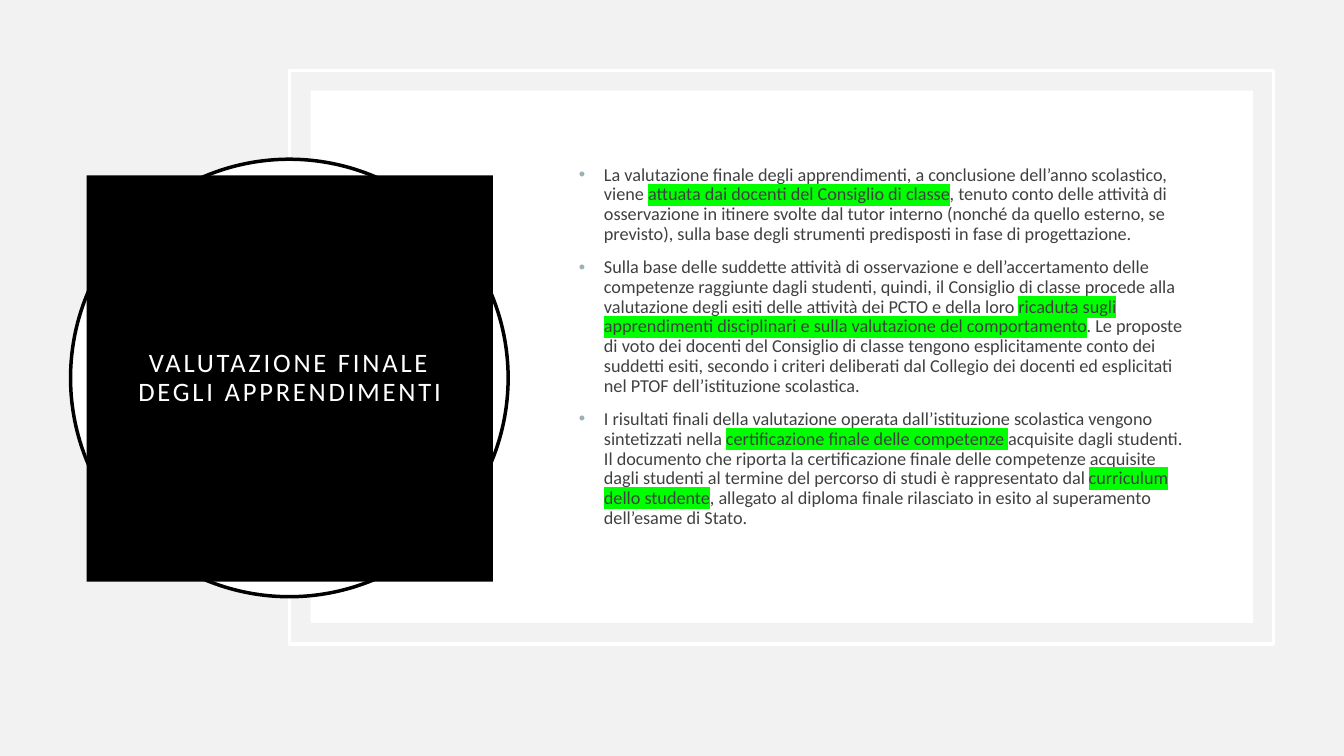
"""Build the slide on the final assessment of learning."""
from lxml.etree import SubElement
from pptx import Presentation
from pptx.dml.color import RGBColor
from pptx.enum.shapes import MSO_SHAPE
from pptx.enum.text import MSO_ANCHOR, MSO_AUTO_SIZE, PP_ALIGN
from pptx.oxml import parse_xml
from pptx.oxml.ns import nsdecls, qn
from pptx.util import Inches, Pt

COLORS = {
    "background": "F2F2F2",
    "white": "FFFFFF",
    "black": "000000",
    "text": "404040",
    "bullet": "9BAFB5",
    "highlight": "00FF00",
}
FONT = "Calibri"
TITLE = "VALUTAZIONE FINALE DEGLI APPRENDIMENTI"
PARAGRAPHS = [
    [
        ("La valutazione finale degli apprendimenti, a conclusione dell’anno scolastico, viene ", False),
        ("attuata dai docenti del Consiglio di classe", True),
        (", tenuto conto delle attività di osservazione in itinere svolte dal tutor interno "
         "(nonché da quello esterno, se previsto), sulla base degli strumenti predisposti "
         "in fase di progettazione.", False),
    ],
    [
        ("Sulla base delle suddette attività di osservazione e dell’accertamento delle competenze "
         "raggiunte dagli studenti, quindi, il Consiglio di classe procede alla valutazione degli "
         "esiti delle attività dei PCTO e della loro ", False),
        ("ricaduta sugli apprendimenti disciplinari e sulla valutazione del comportamento", True),
        (". Le proposte di voto dei docenti del Consiglio di classe tengono esplicitamente conto "
         "dei suddetti esiti, secondo i criteri deliberati dal Collegio dei docenti ed esplicitati "
         "nel PTOF dell’istituzione scolastica.", False),
    ],
    [
        ("I risultati finali della valutazione operata dall’istituzione scolastica vengono "
         "sintetizzati nella ", False),
        ("certificazione finale delle competenze ", True),
        ("acquisite dagli studenti. Il documento che riporta la certificazione finale delle "
         "competenze acquisite dagli studenti al termine del percorso di studi è rappresentato "
         "dal ", False),
        ("curriculum dello studente", True),
        (", allegato al diploma finale rilasciato in esito al superamento dell’esame di Stato.", False),
    ],
]


def color(name):
    """Return the named colour."""
    return RGBColor.from_string(COLORS[name])


def add_panel(slide, kind, box, fill=None, line=None):
    """Add a decorative shape with an optional fill and outline."""
    shape = slide.shapes.add_shape(kind, *map(Inches, box))
    shape.shadow.inherit = False
    if fill:
        shape.fill.solid()
        shape.fill.fore_color.rgb = color(fill)
    else:
        shape.fill.background()
    if line:
        shape.line.color.rgb = color(line)
        shape.line.width = Pt(2.5)
    else:
        shape.line.fill.background()


def place(placeholder, box, margins):
    """Move a placeholder, set its margins and return its text frame."""
    placeholder.left, placeholder.top, placeholder.width, placeholder.height = map(Inches, box)
    frame = placeholder.text_frame
    frame.word_wrap = True
    frame.auto_size = MSO_AUTO_SIZE.NONE
    frame.vertical_anchor = MSO_ANCHOR.MIDDLE
    (frame.margin_left, frame.margin_top,
     frame.margin_right, frame.margin_bottom) = map(Inches, margins)
    return frame


def format_run(run, size, name):
    """Set the font, size and colour of a run."""
    run.font.size = Pt(size)
    run.font.name = FONT
    run.font.color.rgb = color(name)


def highlight(run):
    """Mark a formatted run with the highlight colour."""
    mark = parse_xml(
        f'<a:highlight {nsdecls("a")}><a:srgbClr val="{COLORS["highlight"]}"/></a:highlight>')
    run.font._element.find(qn("a:solidFill")).addnext(mark)


def add_bullet(paragraph):
    """Give a paragraph a hanging coloured bullet."""
    properties = paragraph._p.get_or_add_pPr()
    properties.set("marL", str(Inches(0.25)))
    properties.set("indent", str(Inches(-0.25)))
    bullet_color = SubElement(properties, qn("a:buClr"))
    SubElement(bullet_color, qn("a:srgbClr"), val=COLORS["bullet"])
    SubElement(properties, qn("a:buFont"), typeface="Arial")
    SubElement(properties, qn("a:buChar"), char="•")


def fill_title(placeholder):
    """Write the title on its black block."""
    frame = place(placeholder, (0.86, 1.74, 4.03, 4.03), (0.2, 0.2, 0.2, 0.2))
    placeholder.fill.solid()
    placeholder.fill.fore_color.rgb = color("black")
    frame.text = TITLE
    paragraph = frame.paragraphs[0]
    paragraph.alignment = PP_ALIGN.CENTER
    paragraph.line_spacing = 0.9
    run = paragraph.runs[0]
    format_run(run, 19, "white")
    run.font._element.set("spc", "200")


def fill_body(placeholder):
    """Write the bulleted paragraphs with their highlighted phrases."""
    frame = place(placeholder, (5.64, 1.4, 6.25, 4.28), (0.1, 0.05, 0.1, 0.25))
    for index, pieces in enumerate(PARAGRAPHS):
        paragraph = frame.add_paragraph() if index else frame.paragraphs[0]
        add_bullet(paragraph)
        paragraph.line_spacing = 0.9
        paragraph.space_before = Pt(10 if index else 0)
        for text, marked in pieces:
            run = paragraph.add_run()
            run.text = text
            format_run(run, 13, "text")
            if marked:
                highlight(run)


def main():
    """Build and save the presentation."""
    presentation = Presentation()
    presentation.slide_width = Inches(13.33)
    presentation.slide_height = Inches(7.5)
    slide = presentation.slides.add_slide(presentation.slide_layouts[1])
    slide.background.fill.solid()
    slide.background.fill.fore_color.rgb = color("background")
    title, body = slide.placeholders
    add_panel(slide, MSO_SHAPE.RECTANGLE, (2.87, 0.7, 9.76, 5.69), line="white")
    add_panel(slide, MSO_SHAPE.RECTANGLE, (3.08, 0.9, 9.35, 5.28), fill="white")
    add_panel(slide, MSO_SHAPE.OVAL, (0.7, 1.58, 4.34, 4.34), fill="white", line="black")
    for placeholder in (title, body):
        slide.shapes._spTree.append(placeholder._element)
    fill_title(title)
    fill_body(body)
    presentation.save("out.pptx")


if __name__ == "__main__":
    main()
